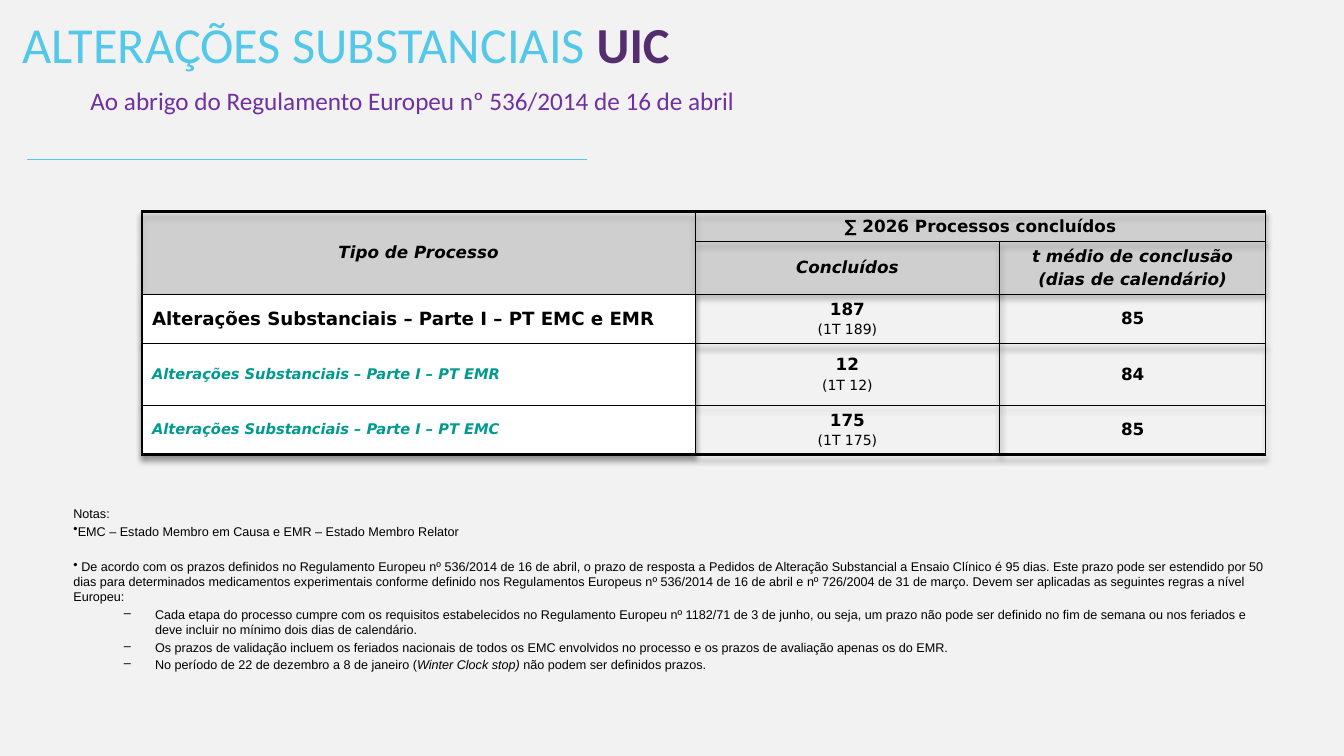
from dataclasses import dataclass
from lxml import etree
from pptx import Presentation, oxml, util as u
from pptx.dml import color
from pptx.enum import shapes, text
from pptx.oxml import ns


@dataclass(frozen=True)
class Theme:
    """Colours, fonts and type sizes of the slide."""
    back: str = "F2F2F2"
    ink: str = "000000"
    sky: str = "53C8E9"
    plum: str = "532D6D"
    violet: str = "7030A0"
    teal: str = "009A8F"
    grey: str = "DDDDDD"
    white: str = "FFFFFF"
    head: str = "Calibri"
    grid: str = "DejaVu Sans"
    body: str = "Arial"
    title: float = 36
    sub: float = 18
    main: float = 13
    cell: float = 12
    minor: float = 10.5
    small: float = 10
    note: float = 9


T = Theme()
LEFT, MID = text.PP_ALIGN.LEFT, text.PP_ALIGN.CENTER
NO_STYLE = "{2D5ABB26-0587-4C30-8999-92F81FD0307C}"
COLS = (13.94, 7.67, 6.71)
ROWS = (0.75, 1.33, 1.24, 1.56, 1.24)
HEADS = (
    (0, 0, ["Tipo de Processo"], True),
    (0, 1, ["∑ 2026 Processos concluídos"], False),
    (1, 1, ["Concluídos"], True),
    (1, 2, ["t médio de conclusão", "(dias de calendário)"], True),
)
DATA = (
    ("Alterações Substanciais – Parte I – PT EMC e EMR", "187", "(1T 189)", "85"),
    ("Alterações Substanciais – Parte I – PT EMR", "12", "(1T 12)", "84"),
    ("Alterações Substanciais – Parte I – PT EMC", "175", "(1T 175)", "85"),
)
NOTES = (
    ("", 0, ["Notas:"]),
    ("•", 1.8, ["EMC – Estado Membro em Causa e EMR – Estado Membro Relator"]),
    ("•", 14.4, [
        " De acordo com os prazos definidos no Regulamento Europeu nº 536/2014 de 16 de abril, "
        "o prazo de resposta a Pedidos de Alteração Substancial a Ensaio Clínico é 95 dias. "
        "Este prazo pode ser estendido por 50 dias para determinados medicamentos experimentais "
        "conforme definido nos Regulamentos Europeus nº 536/2014 de 16 de abril e nº 726/2004 "
        "de 31 de março. Devem ser aplicadas as seguintes regras a nível Europeu:"]),
    ("–", 1.8, [
        "Cada etapa do processo cumpre com os requisitos estabelecidos no Regulamento Europeu "
        "nº 1182/71 de 3 de junho, ou seja, um prazo não pode ser definido no fim de semana ou "
        "nos feriados e deve incluir no mínimo dois dias de calendário."]),
    ("–", 1.8, [
        "Os prazos de validação incluem os feriados nacionais de todos os EMC envolvidos no "
        "processo e os prazos de avaliação apenas os do EMR."]),
    ("–", 1.8, ["No período de 22 de dezembro a 8 de janeiro (", "Winter Clock stop) ",
                "não podem ser definidos prazos."]),
)


def rgb(hue):
    """Turn a hex string into a colour."""
    return color.RGBColor.from_string(hue)


def style(font, name, size, hue=T.ink, bold=False, slant=False):
    """Set every trait of a font."""
    font.name, font.size = name, u.Pt(size)
    font.bold, font.italic = bold, slant
    font.color.rgb = rgb(hue)


def place(shape, box):
    """Move a shape to a box of left, top, width and height in cm."""
    shape.left, shape.top, shape.width, shape.height = map(u.Cm, box)


def add_title(slide, box):
    """Fill the title placeholder with its two-colour heading."""
    shape = slide.shapes.title
    place(shape, box)
    frame = shape.text_frame
    frame.word_wrap, frame.auto_size = True, text.MSO_AUTO_SIZE.NONE
    frame.vertical_anchor = text.MSO_ANCHOR.TOP
    frame.margin_left, frame.margin_top = u.Cm(0.56), u.Cm(0.58)
    frame.margin_bottom = 0
    para = frame.paragraphs[0]
    para.alignment = LEFT
    for words, hue, bold in (("ALTERAÇÕES SUBSTANCIAIS ", T.sky, False),
                             ("UIC", T.plum, True)):
        run = para.add_run()
        run.text = words
        style(run.font, T.head, T.title, hue, bold)


def add_sub(slide, box):
    """Write the line below the title."""
    frame = slide.shapes.add_textbox(*map(u.Cm, box)).text_frame
    frame.word_wrap = True
    frame.vertical_anchor = text.MSO_ANCHOR.MIDDLE
    para = frame.paragraphs[0]
    para.text = "Ao abrigo do Regulamento Europeu nº 536/2014 de 16 de abril"
    style(para.font, T.head, T.sub, T.violet)


def add_rule(slide, box):
    """Draw the thin rule under the heading."""
    left, top, width, _ = box
    rule = slide.shapes.add_connector(
        shapes.MSO_CONNECTOR.STRAIGHT, *map(u.Cm, (left, top, left + width, top)))
    rule.line.color.rgb, rule.line.width = rgb(T.sky), u.Pt(0.5)
    etree.SubElement(rule._element.spPr, ns.qn("a:effectLst"))


def edge(cell, row, col):
    """Border a cell, with heavy lines on the left, top and bottom of the table."""
    props = cell._tc.get_or_add_tcPr()
    heavy = {"L": col == 0, "R": False, "T": row == 0, "B": row == len(ROWS) - 1}
    for spot, (side, thick) in enumerate(heavy.items()):
        width = u.Pt(2.25 if thick else 1)
        props.insert(spot, oxml.parse_xml(
            f'<a:ln{side} {ns.nsdecls("a")} w="{width}"><a:solidFill>'
            f'<a:srgbClr val="{T.ink}"/></a:solidFill></a:ln{side}>'))


def paint(cell, row, col):
    """Give a cell the fill of its part of the table."""
    if row > 1 and col:
        cell.fill.background()
        return
    cell.fill.solid()
    cell.fill.fore_color.rgb = rgb(T.grey if row < 2 else T.white)
    if row < 2:
        hue = cell._tc.tcPr.find(".//" + ns.qn("a:srgbClr"))
        etree.SubElement(hue, ns.qn("a:alpha"), val="50000")


def write(cell, lines, align=MID):
    """Put styled lines of (words, size, hue, bold, slant) in a cell."""
    frame = cell.text_frame
    for spot, (words, size, *look) in enumerate(lines):
        para = frame.add_paragraph() if spot else frame.paragraphs[0]
        para.text, para.alignment = words, align
        if spot:
            para.space_before = u.Pt(size * 0.2)
        style(para.font, T.grid, size, *look)


def add_grid(slide, box):
    """Build the table of finished cases."""
    grid = slide.shapes.add_table(len(ROWS), len(COLS), *map(u.Cm, box)).table
    grid.first_row = grid.horz_banding = False
    props = grid._tbl.tblPr
    props.find(ns.qn("a:tableStyleId")).text = NO_STYLE
    props.insert(0, oxml.parse_xml(
        f'<a:effectLst {ns.nsdecls("a")}><a:outerShdw blurRad="50800" dist="38100" '
        f'dir="5400000"><a:srgbClr val="{T.ink}"><a:alpha val="40000"/></a:srgbClr>'
        '</a:outerShdw></a:effectLst>'))
    for col, width in zip(grid.columns, COLS):
        col.width = u.Cm(width)
    for row, height in enumerate(ROWS):
        grid.rows[row].height = u.Cm(height)
        for col in range(len(COLS)):
            cell = grid.cell(row, col)
            cell.vertical_anchor = text.MSO_ANCHOR.MIDDLE
            paint(cell, row, col)
            edge(cell, row, col)
    grid.cell(0, 0).merge(grid.cell(1, 0))
    grid.cell(0, 1).merge(grid.cell(0, 2))
    for row, col, lines, slant in HEADS:
        write(grid.cell(row, col), [(line, T.cell, T.ink, True, slant) for line in lines])
    for row, (name, done, past, days) in enumerate(DATA, 2):
        look = (T.main, T.ink, True, False) if row == 2 else (T.minor, T.teal, True, True)
        write(grid.cell(row, 0), [(name, *look)], LEFT)
        write(grid.cell(row, 1), [(done, T.cell, T.ink, True), (past, T.small)])
        write(grid.cell(row, 2), [(days, T.cell, T.ink, True)])


def add_notes(slide, box):
    """Write the bulleted notes."""
    frame = slide.shapes.add_textbox(*map(u.Cm, box)).text_frame
    frame.word_wrap, frame.auto_size = True, text.MSO_AUTO_SIZE.SHAPE_TO_FIT_TEXT
    for spot, (mark, gap, bits) in enumerate(NOTES):
        para = frame.add_paragraph() if spot else frame.paragraphs[0]
        if spot:
            para.space_before = u.Pt(gap)
        if mark:
            deep = mark == "–"
            para.level = int(deep)
            props = para._p.get_or_add_pPr()
            props.set("marL", str(u.Cm(2.06 if deep else 0)))
            props.set("indent", str(u.Cm(-0.79 if deep else 0)))
            etree.SubElement(props, ns.qn("a:buChar"), char=mark)
        style(para.font, T.body, T.note)
        for turn, words in enumerate(bits):
            run = para.add_run()
            run.text = words
            if turn == 1:
                run.font.italic = True


def main():
    """Build the slide and save it."""
    deck = Presentation()
    deck.slide_width, deck.slide_height = u.Cm(33.87), u.Cm(19.05)
    slide = deck.slides.add_slide(deck.slide_layouts[5])
    slide.background.fill.solid()
    slide.background.fill.fore_color.rgb = rgb(T.back)
    add_rule(slide, (0.69, 4.01, 14.1, 0))
    add_title(slide, (0, -0.25, 22.86, 2.16))
    add_grid(slide, (3.58, 5.33, sum(COLS), sum(ROWS)))
    add_sub(slide, (2.03, 1.9, 21.08, 1.24))
    add_notes(slide, (1.6, 12.62, 30.66, 4.57))
    deck.save("out.pptx")


if __name__ == "__main__":
    main()
